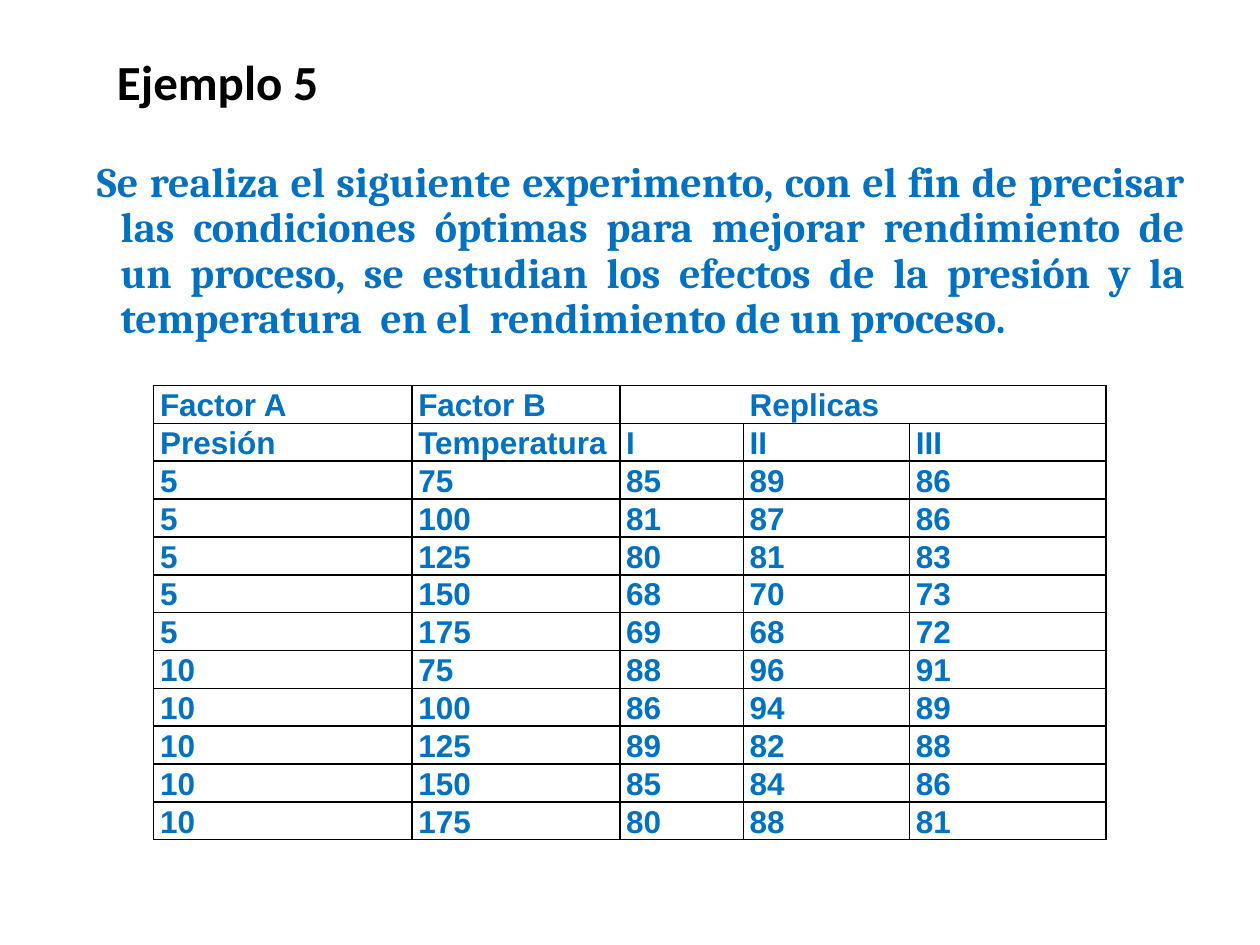
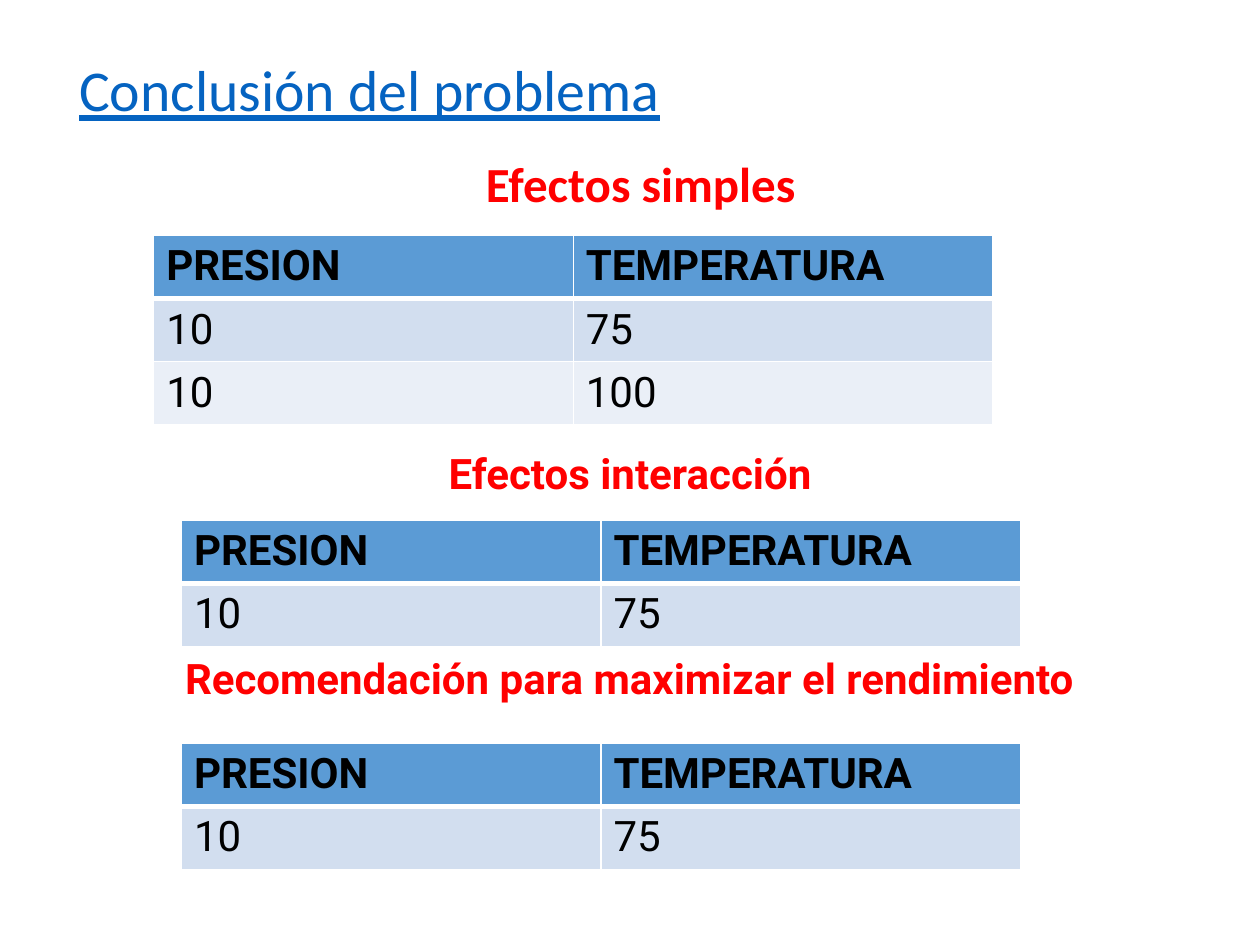
import pptx
import pptx.dml.color
import pptx.enum.text
import pptx.oxml.ns
import pptx.util
from lxml import etree

Inches = pptx.util.Inches
Pt = pptx.util.Pt
ALIGN = pptx.enum.text.PP_ALIGN
ANCHOR = pptx.enum.text.MSO_ANCHOR
qn = pptx.oxml.ns.qn

COLORS = {
    "black": "000000",
    "white": "FFFFFF",
    "blue": "0070C0",
    "link": "0563C1",
    "red": "FF0000",
    "header": "5B9BD5",
    "band_dark": "D2DEEF",
    "band_light": "EAEFF7",
}


def rgb(name):
    return pptx.dml.color.RGBColor.from_string(COLORS[name])


def write(frame, text, font="Calibri", size=24, color="black", bold=False, underline=None,
          align=ALIGN.LEFT, line_spacing=None, before=0, hanging=0):
    paragraph = frame.paragraphs[0]
    paragraph.alignment = align
    paragraph.line_spacing = line_spacing
    paragraph.space_before = Pt(before)
    if hanging:
        properties = paragraph._p.get_or_add_pPr()
        properties.set("marL", str(Inches(hanging)))
        properties.set("indent", str(-Inches(hanging)))
    if not text:
        etree.SubElement(paragraph._p, qn("a:endParaRPr"), sz=str(size * 100))
        return
    run = paragraph.add_run()
    run.text = text
    run.font.name = font
    run.font.size = Pt(size)
    run.font.bold = bold
    run.font.underline = underline
    run.font.color.rgb = rgb(color)


class Deck:
    heading = dict(color="red", bold=True, align=ALIGN.CENTER)
    body = dict(line_spacing=0.9, before=7.5, hanging=0.19)

    def __init__(self):
        self.presentation = pptx.Presentation()
        self.presentation.slide_width = Inches(10)
        self.presentation.slide_height = Inches(7.5)
        self.slide = None

    def new_slide(self):
        self.slide = self.presentation.slides.add_slide(self.presentation.slide_layouts[6])

    def text(self, text, box, anchor=ANCHOR.TOP, wrap=True, **style):
        frame = self.slide.shapes.add_textbox(*map(Inches, box)).text_frame
        frame.word_wrap = wrap
        frame.vertical_anchor = anchor
        write(frame, text, **style)

    def title(self, text, box, **style):
        self.text(text, box, anchor=ANCHOR.MIDDLE, line_spacing=0.9, **style)

    def table(self, left, top, widths, row_height, row_count):
        table = self.slide.shapes.add_table(
            row_count, len(widths), Inches(left), Inches(top),
            Inches(sum(widths)), Inches(row_height * row_count)).table
        table.first_row = False
        table.horz_banding = False
        for column, width in zip(table.columns, widths):
            column.width = Inches(width)
        for row in table.rows:
            row.height = Inches(row_height)
        return table

    def borders(self, cell, color, **widths):
        properties = cell._tc.get_or_add_tcPr()
        for side in "LRTB":
            width = widths.get(side, 1)
            line = etree.SubElement(properties, qn(f"a:ln{side}"), w=str(Pt(width)))
            if width:
                fill = etree.SubElement(line, qn("a:solidFill"))
                etree.SubElement(fill, qn("a:srgbClr"), val=COLORS[color])
            else:
                etree.SubElement(line, qn("a:noFill"))

    def experiment_table(self, rows):
        table = self.table(1.22, 3.06, [2.05, 1.65, 0.98, 1.32, 1.56], 0.28, len(rows))
        for r, row in enumerate(rows):
            for c, value in enumerate(row):
                cell = table.cell(r, c)
                replicas_left = 0 if r == 0 and c > 2 else 1
                replicas_right = 0 if r == 0 and c in (2, 3) else 1
                self.borders(cell, "black", L=replicas_left, R=replicas_right)
                cell.fill.background()
                cell.vertical_anchor = ANCHOR.BOTTOM
                cell.margin_left = cell.margin_right = Inches(0.05)
                cell.margin_top = cell.margin_bottom = 0
                write(cell.text_frame, str(value), font="Arial", size=18, color="blue",
                      bold=True, align=ALIGN.JUSTIFY if r > 1 else ALIGN.LEFT)

    def effects_table(self, left, top, conditions):
        rows = [("PRESION", "TEMPERATURA"), *conditions]
        table = self.table(left, top, [3.33, 3.33], 0.49, len(rows))
        fills = ["header", "band_dark", "band_light"]
        for r, row in enumerate(rows):
            for c, value in enumerate(row):
                cell = table.cell(r, c)
                self.borders(cell, "white", T=3 if r == 1 else 1, B=3 if r == 0 else 1)
                cell.fill.solid()
                cell.fill.fore_color.rgb = rgb(fills[r])
                write(cell.text_frame, str(value), font="Roboto", bold=r == 0)


def experiment_slide(deck):
    deck.new_slide()
    deck.title("Ejemplo 5", (0.83, 0.21, 4.92, 0.92), size=28, bold=True)
    deck.text(
        "Se realiza el siguiente experimento, con el fin de precisar las condiciones óptimas "
        "para mejorar rendimiento de un proceso, se estudian los efectos de la presión y la "
        "temperatura  en el  rendimiento de un proceso.",
        (0.67, 1.23, 8.83, 1.83), font="Cambria", color="blue", bold=True,
        align=ALIGN.JUSTIFY, **deck.body)
    yields = {
        5: [(85, 89, 86), (81, 87, 86), (80, 81, 83), (68, 70, 73), (69, 68, 72)],
        10: [(88, 96, 91), (86, 94, 89), (89, 82, 88), (85, 84, 86), (80, 88, 81)],
    }
    deck.experiment_table([
        ("Factor A", "Factor B", "", "Replicas", ""),
        ("Presión", "Temperatura", "I", "II", "III"),
        *((pressure, temperature, *replicas)
          for pressure, series in yields.items()
          for temperature, replicas in zip(range(75, 200, 25), series)),
    ])


def conclusion_slide(deck):
    deck.new_slide()
    deck.title("Conclusión del problema", (0.53, 0.28, 8.5, 0.92), size=33,
               color="link", underline=True)
    deck.text("Efectos simples", (0.75, 1.22, 8.67, 0.53), size=28, **deck.heading, **deck.body)
    deck.effects_table(1.22, 1.87, [(10, 75), (10, 100)])
    for heading, box, table_top in [
        ("Efectos interacción", (3.29, 3.5, 3.42, 0.5), 4.13),
        ("Recomendación para maximizar el rendimiento", (0.91, 5.13, 8.17, 0.5), 5.9),
    ]:
        deck.text(heading, box, wrap=False, font="Roboto", **deck.heading)
        deck.effects_table(1.44, table_top, [(10, 75)])


def main():
    deck = Deck()
    experiment_slide(deck)
    conclusion_slide(deck)
    deck.presentation.save("out.pptx")


if __name__ == "__main__":
    main()
